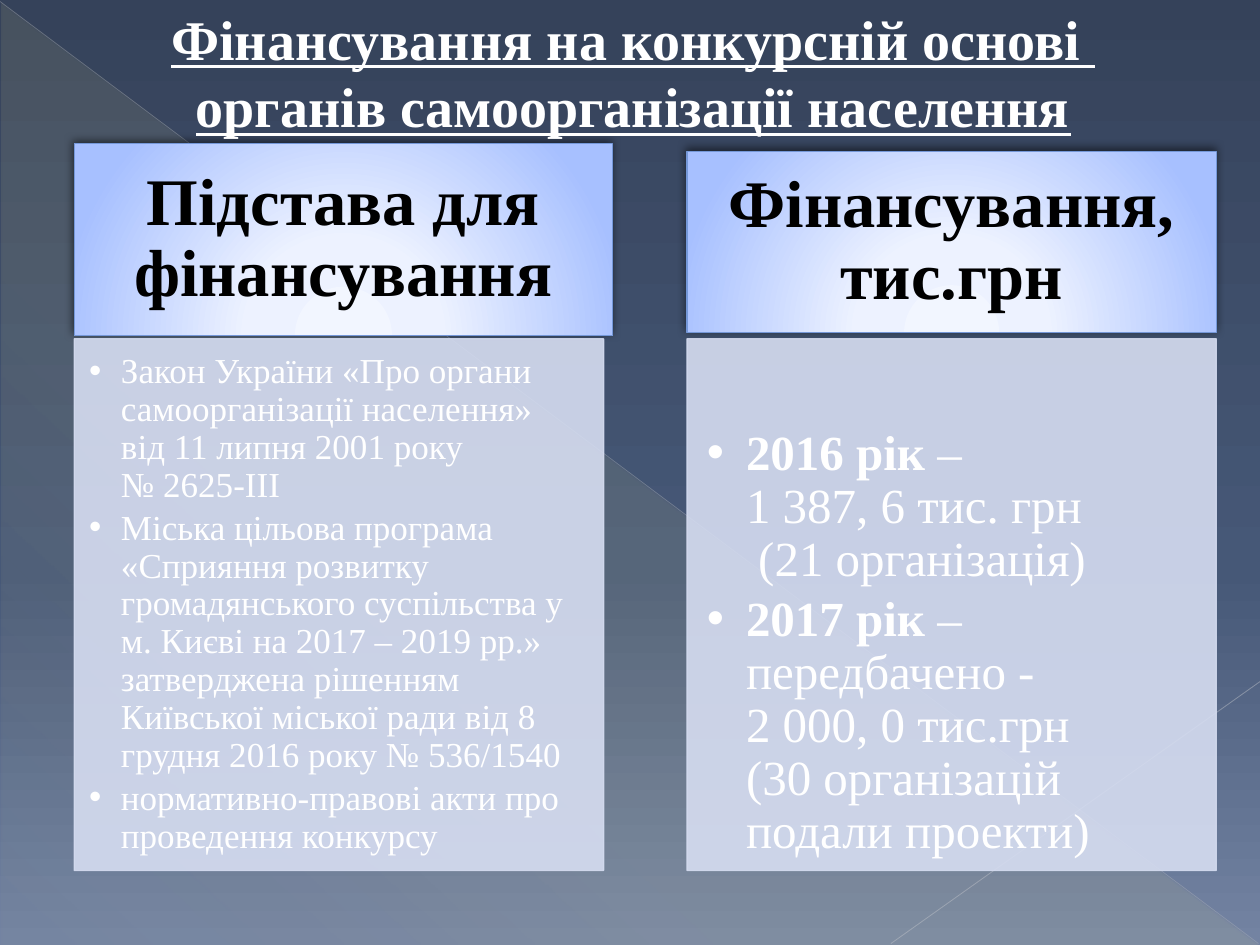
from lxml.etree import SubElement
from pptx import Presentation
from pptx.dml.color import RGBColor
from pptx.enum.shapes import MSO_CONNECTOR, MSO_SHAPE
from pptx.enum.text import MSO_ANCHOR, MSO_AUTO_SIZE, PP_ALIGN
from pptx.oxml import parse_xml
from pptx.oxml.ns import nsdecls, qn
from pptx.util import Cm, Pt

FONT = "Times New Roman"
WHITE = RGBColor(0xFF, 0xFF, 0xFF)
BLACK = RGBColor(0, 0, 0)
BLUE = RGBColor(0x75, 0x98, 0xD9)
PALE = RGBColor(0xD6, 0xDD, 0xF1)
GREY = RGBColor(0xBA, 0xBD, 0xC4)
SILVER = RGBColor(0xC1, 0xC4, 0xCA)

# Gradient stops: position, colour, opacity (percent)
SKY = [(0, "35425A", 100), (60, "465877", 100), (100, "7383A2", 100)]
GLOW = [(0, "FFF39D", 10), (70, "FFF39D", 8), (100, "FFF39D", 1)]
HEAD = [(0, "F2F6FF", 100), (34, "EDF2FF", 100), (100, "A7C0FF", 100)]
DOWN = '<a:lin ang="5400000" scaled="0"/>'
SLANT = '<a:lin ang="7980000" scaled="0"/>'
ROUND = ('<a:path path="circle"><a:fillToRect l="50000" t="155000" '
         'r="50000" b="-55000"/></a:path>')

TITLE = ["Фінансування на конкурсній основі ",
         "органів самоорганізації населення"]

# A paragraph is a list of (text, bold) runs; boxes are in cm
COLUMNS = [
    {"head": "Підстава для фінансування", "box": (1.5, 2.9, 10.85, 3.86),
     "size": 20, "indent": 0.64, "inset": (0.3, 0.3, 0.4, 0.43),
     "items": [
         [("Закон України «Про органи самоорганізації населення» "
           "від 11 липня 2001 року\n№ 2625-III", False)],
         [("Міська цільова програма «Сприяння розвитку громадянського "
           "суспільства у м. Києві на 2017 – 2019 рр.» затверджена рішенням "
           "Київської міської ради від 8 грудня 2016 року № 536/1540", False)],
         [("нормативно-правові акти про проведення конкурсу", False)]]},
    {"head": "Фінансування, тис.грн", "box": (13.85, 3.05, 10.67, 3.66),
     "size": 28, "indent": 0.79, "inset": (0.4, 1.8, 0.56, 0.6),
     "items": [
         [("2016 рік ", True),
          ("–\n1 387, 6 тис. грн\n (21 організація)", False)],
         [("2017 рік ", True),
          ("– передбачено -\n2 000, 0 тис.грн\n"
           "(30 організацій подали проекти)", False)]]},
]
BODY_TOP, BODY_W, BODY_H = 6.83, 10.67, 10.72


def shade(fill, root, stops, way):
    fill.gradient()
    marks = "".join(
        f'<a:gs pos="{pos * 1000}"><a:srgbClr val="{tone}">'
        f'<a:alpha val="{alpha * 1000}"/></a:srgbClr></a:gs>'
        for pos, tone, alpha in stops)
    old = root.find(".//" + qn("a:gradFill"))
    old.getparent().replace(old, parse_xml(
        f'<a:gradFill {nsdecls("a")} rotWithShape="1">'
        f'<a:gsLst>{marks}</a:gsLst>{way}</a:gradFill>'))


def fade(root, alpha):
    """Give every solid colour under root this opacity."""
    for tone in root.iter(qn("a:srgbClr")):
        SubElement(tone, qn("a:alpha"), val=str(alpha * 1000))


def write(frame, paras, size, color=WHITE, align=PP_ALIGN.LEFT, under=None,
          lead=None, after=0, indent=0, inset=None, anchor=MSO_ANCHOR.TOP,
          wrap=True):
    frame.auto_size = MSO_AUTO_SIZE.NONE
    frame.word_wrap = wrap
    frame.vertical_anchor = anchor
    if inset:
        (frame.margin_left, frame.margin_top,
         frame.margin_right, frame.margin_bottom) = map(Cm, inset)
    for i, runs in enumerate(paras):
        para = frame.add_paragraph() if i else frame.paragraphs[0]
        para.alignment = align
        para.line_spacing = lead
        para.space_before, para.space_after = Pt(0), Pt(after)
        if indent:
            props = para._p.get_or_add_pPr()
            props.set("marL", str(Cm(indent)))
            props.set("indent", str(-Cm(indent)))
            SubElement(props, qn("a:buFont"), typeface="Arial")
            SubElement(props, qn("a:buChar"), char="•")
        for text, bold in runs:
            for j, part in enumerate(text.split("\n")):
                if j:
                    para.add_line_break()
                run = para.add_run()
                run.text = part
                font = run.font
                font.name, font.size, font.bold = FONT, Pt(size), bold
                font.underline = under
                font.color.rgb = color


def block(slide, kind, box):
    shape = slide.shapes.add_shape(kind, *map(Cm, box))
    shape.shadow.inherit = False
    return shape


def ray(slide, ends, color, width, alpha):
    line = slide.shapes.add_connector(MSO_CONNECTOR.STRAIGHT, *map(Cm, ends))
    line.line.color.rgb = color
    line.line.width = Pt(width)
    props = line.element.spPr
    fade(props, alpha)
    SubElement(props, qn("a:effectLst"))


def column(slide, head, box, size, indent, inset, items):
    top = block(slide, MSO_SHAPE.RECTANGLE, box)
    props = top.element.spPr
    shade(top.fill, props, HEAD, ROUND)
    top.line.color.rgb = BLUE
    top.line.width = Pt(0.75)
    props.find(qn("a:effectLst")).append(parse_xml(
        f'<a:outerShdw {nsdecls("a")} blurRad="{Pt(5)}" dist="{Pt(2)}" '
        'dir="14700000" rotWithShape="0"><a:srgbClr val="000000">'
        '<a:alpha val="50000"/></a:srgbClr></a:outerShdw>'))
    write(top.text_frame, [[(head, True)]], 38, BLACK, PP_ALIGN.CENTER,
          lead=0.9, inset=(0.76, 0.43, 0.76, 0.43), anchor=MSO_ANCHOR.MIDDLE)

    body = block(slide, MSO_SHAPE.RECTANGLE, (box[0], BODY_TOP, BODY_W, BODY_H))
    body.fill.solid()
    body.fill.fore_color.rgb = PALE
    body.line.color.rgb = PALE
    body.line.width = Pt(0.75)
    fade(body.element.spPr, 90)
    write(body.text_frame, items, size, lead=0.9, after=size * 0.15,
          indent=indent, inset=inset)


def main():
    deck = Presentation()
    deck.slide_width, deck.slide_height = Cm(25.4), Cm(19.05)
    slide = deck.slides.add_slide(deck.slide_layouts[5])
    shade(slide.background.fill, slide.element, SKY, DOWN)

    glow = block(slide, MSO_SHAPE.RIGHT_TRIANGLE, (0.03, 0.05, 25.35, 19))
    shade(glow.fill, glow.element.spPr, GLOW, SLANT)
    glow.line.fill.background()
    ray(slide, (0, 0.03, 25.37, 19.02), GREY, 0.39, 35)
    ray(slide, (25.4, 13.74, 17.96, 19.02), SILVER, 0.47, 45)

    for col in COLUMNS:
        column(slide, **col)

    title = slide.shapes.title
    title.left, title.top, title.width, title.height = map(
        Cm, (3.1, -0.05, 19.33, 3))
    write(title.text_frame, [[(text, True)] for text in TITLE], 32,
          align=PP_ALIGN.CENTER, under=True, anchor=MSO_ANCHOR.MIDDLE,
          wrap=False)
    title.element.getparent().append(title.element)
    deck.save("out.pptx")


if __name__ == "__main__":
    main()
